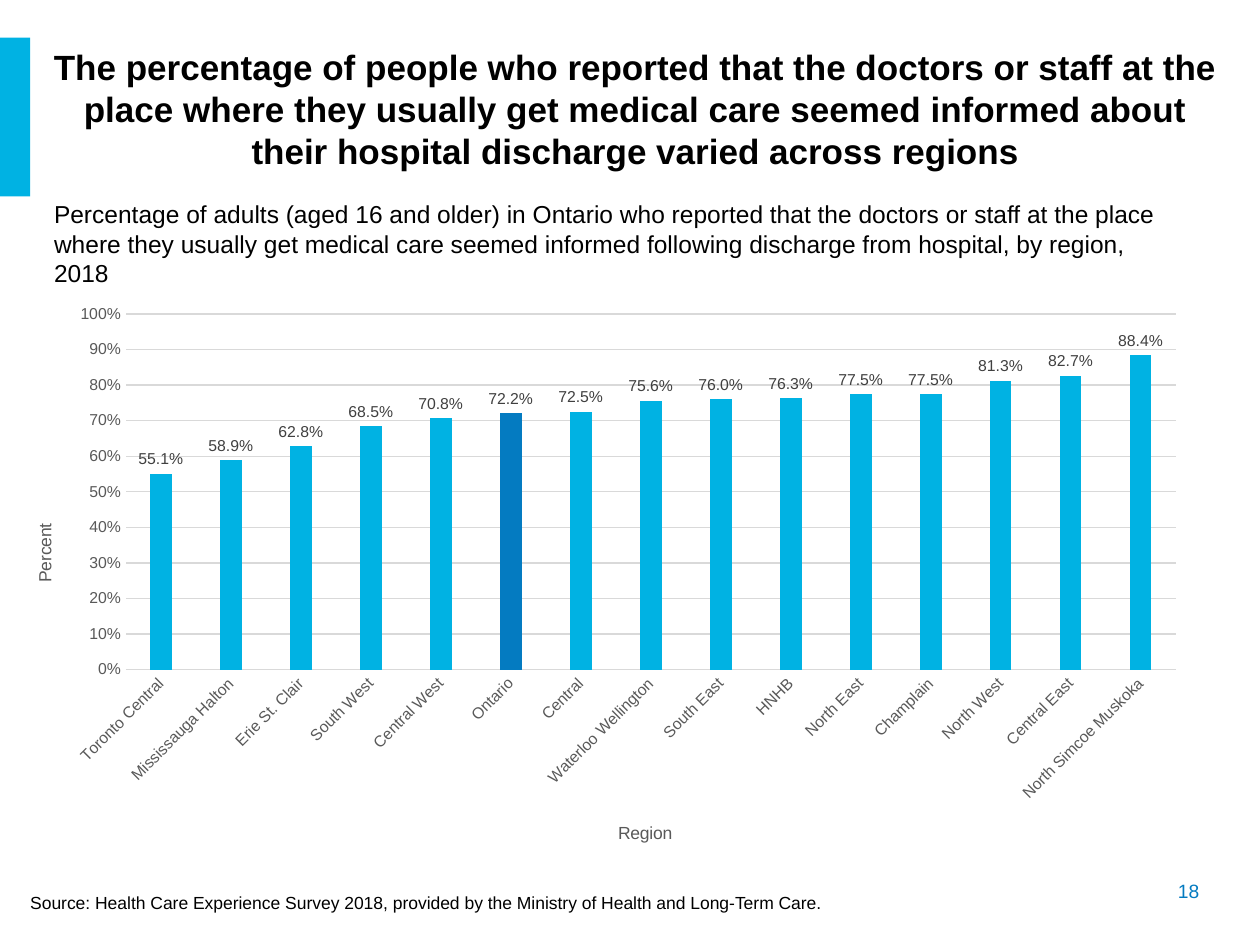
from pptx import Presentation
from pptx.chart.data import CategoryChartData
from pptx.dml.color import RGBColor
from pptx.enum.chart import XL_CHART_TYPE, XL_LABEL_POSITION, XL_TICK_MARK
from pptx.enum.shapes import MSO_SHAPE
from pptx.enum.text import MSO_ANCHOR, MSO_AUTO_SIZE, PP_ALIGN
from pptx.oxml import parse_xml
from pptx.oxml.ns import nsdecls, qn
from pptx.util import Cm, Pt

FONT = "Arial"
BLACK, GREY, LABEL, GRID = "000000", "595959", "404040", "D9D9D9"
CYAN, BLUE = "00B2E3", "047BC1"

TITLE = ("The percentage of people who reported that the doctors or staff at the "
         "place where they usually get medical care seemed informed about their "
         "hospital discharge varied across regions")
SUBTITLE = ("Percentage of adults (aged 16 and older) in Ontario who reported that the "
            "doctors or staff at the place where they usually get medical care seemed "
            "informed following discharge from hospital, by region, 2018")
SOURCE = ("Source: Health Care Experience Survey 2018, provided by the Ministry of "
          "Health and Long-Term Care.")
PAGE = "18"
HIGHLIGHT = "Ontario"
REGIONS = [
    ("Toronto Central", 0.551), ("Mississauga Halton", 0.589),
    ("Erie St. Clair", 0.628), ("South West", 0.685), ("Central West", 0.708),
    ("Ontario", 0.722), ("Central", 0.725), ("Waterloo Wellington", 0.756),
    ("South East", 0.76), ("HNHB", 0.763), ("North East", 0.775),
    ("Champlain", 0.775), ("North West", 0.813), ("Central East", 0.827),
    ("North Simcoe Muskoka", 0.884),
]


def color(value):
    return RGBColor.from_string(value)


def paint(fill, value):
    fill.solid()
    fill.fore_color.rgb = color(value)


def style(font, size, value, bold=False):
    font.name, font.size, font.bold = FONT, Pt(size), bold
    font.color.rgb = color(value)


def write(sp, text, size, value=BLACK, bold=False, align=PP_ALIGN.LEFT):
    tf = sp.text_frame
    tf.word_wrap = True
    tf.auto_size = MSO_AUTO_SIZE.NONE
    tf.vertical_anchor = MSO_ANCHOR.TOP
    tf.text = text
    p = tf.paragraphs[0]
    p.alignment = align
    style(p.runs[0].font, size, value, bold)


def place(parent, index, **parts):
    old = parent.find(qn("c:layout"))
    if old is not None:
        parent.remove(old)
    target = '<c:layoutTarget val="inner"/>' if "w" in parts else ""
    modes = "".join(f'<c:{k}Mode val="edge"/>' for k in "xy")
    values = "".join(f'<c:{k} val="{v}"/>' for k, v in parts.items())
    parent.insert(index, parse_xml(
        f'<c:layout {nsdecls("c")}><c:manualLayout>{target}{modes}{values}'
        '</c:manualLayout></c:layout>'))


def format_axis(axis, title, x, y):
    axis.major_tick_mark = axis.minor_tick_mark = XL_TICK_MARK.NONE
    style(axis.tick_labels.font, 9, GREY)
    tf = axis.axis_title.text_frame
    tf.text = title
    style(tf.paragraphs[0].runs[0].font, 10, GREY)
    place(axis.axis_title._element, 1, x=x, y=y)


def add_region_chart(s):
    data = CategoryChartData(number_format="0.0%")
    data.categories = [name for name, _ in REGIONS]
    data.add_series("Series 1", [value for _, value in REGIONS])
    chart = s.shapes.add_chart(XL_CHART_TYPE.COLUMN_CLUSTERED, Cm(0.13), Cm(5.87),
                               Cm(24.05), Cm(11.56), data).chart
    chart.has_legend = chart.has_title = False
    style(chart.font, 10, BLACK)
    place(chart._chartSpace.chart.plotArea, 0, x=0.1, y=0.04, w=0.88, h=0.62)

    cat, val = chart.category_axis, chart.value_axis
    format_axis(cat, "Region", 0.51, 0.92)
    cat.format.line.color.rgb = color(GRID)
    cat.format.line.width = Pt(0.75)
    cat._element.find(qn("c:txPr")).find(qn("a:bodyPr")).set("rot", "-2700000")

    format_axis(val, "Percent", 0.02, 0.4)
    body = val.axis_title.text_frame._txBody.find(qn("a:bodyPr"))
    body.set("rot", "-5400000")
    body.set("vert", "horz")
    val.minimum_scale, val.maximum_scale, val.major_unit = 0, 1, 0.1
    val.tick_labels.number_format = "0%"
    val.tick_labels.number_format_is_linked = False
    val.format.line.fill.background()
    val.major_gridlines.format.line.color.rgb = color(GRID)
    val.major_gridlines.format.line.width = Pt(0.75)

    plot = chart.plots[0]
    plot.gap_width, plot.overlap, plot.vary_by_categories = 219, -27, False
    series = plot.series[0]
    paint(series.format.fill, CYAN)
    highlight = [name for name, _ in REGIONS].index(HIGHLIGHT)
    paint(series.points[highlight].format.fill, BLUE)
    labels = series.data_labels
    labels.show_value = True
    labels.position = XL_LABEL_POSITION.OUTSIDE_END
    labels.number_format = "0.0%"
    labels.number_format_is_linked = False
    style(labels.font, 9, LABEL)


def main():
    prs = Presentation()
    prs.slide_width, prs.slide_height = Cm(25.4), Cm(19.05)
    s = prs.slides.add_slide(prs.slide_layouts[5])

    bar = s.shapes.add_shape(MSO_SHAPE.RECTANGLE, 0, Cm(0.76), Cm(0.61), Cm(3.2))
    bar.shadow.inherit = False
    paint(bar.fill, CYAN)
    bar.line.fill.background()

    title = s.shapes.title
    title.left, title.top, title.width, title.height = Cm(0.81), Cm(0.79), Cm(24), Cm(2.82)
    write(title, TITLE, 20, bold=True, align=PP_ALIGN.CENTER)

    texts = [
        (SUBTITLE, (0.84, 3.89, 23.34, 1.45), 14, BLACK, PP_ALIGN.LEFT),
        (SOURCE, (0.36, 17.86, 22.6, 0.69), 10, BLACK, PP_ALIGN.LEFT),
        (PAGE, (21.46, 17.6, 2.97, 0.74), 11, BLUE, PP_ALIGN.RIGHT),
    ]
    for text, box, size, value, align in texts:
        sp = s.shapes.add_textbox(*map(Cm, box))
        write(sp, text, size, value, align=align)

    add_region_chart(s)
    prs.save("out.pptx")


if __name__ == "__main__":
    main()
